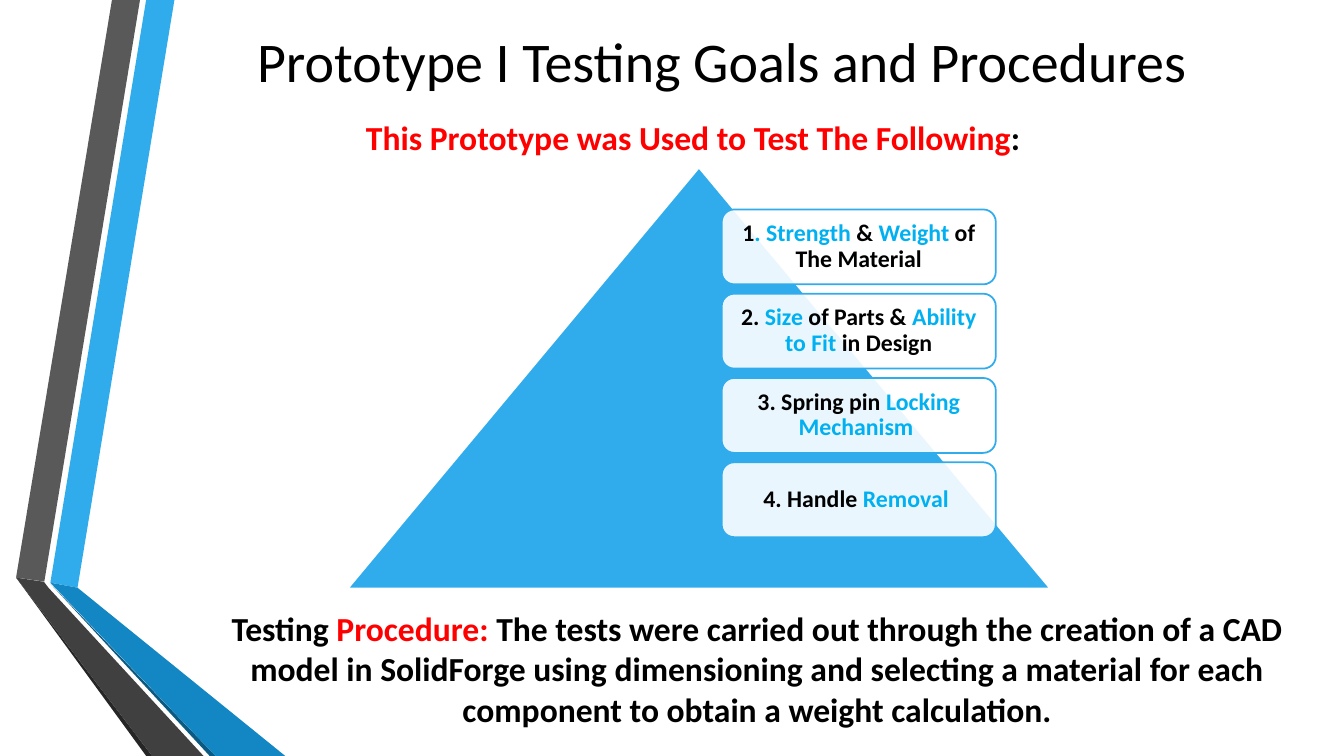
from dataclasses import dataclass

from lxml import etree
from pptx import Presentation
from pptx.dml.color import RGBColor
from pptx.enum import shapes, text
from pptx.oxml import ns
from pptx.util import Pt

COLOURS = {
    "black": "000000",
    "red": "FF0000",
    "white": "FFFFFF",
    "sky": "30ACEC",
    "accent": "00B0F0",
    "ocean": "1287C3",
    "navy": "0C5A82",
    "grey": "595959",
    "charcoal": "404040",
    "soot": "262626",
}
FONT = "Calibri"


@dataclass
class Span:
    words: str
    colour: str = "black"


@dataclass
class Ribbon:
    colour: str
    points: list[tuple[float, float]]


@dataclass
class Area:
    left: float
    top: float
    width: float
    height: float


RIBBONS = [
    Ribbon("sky", [(36, 416.2), (55.4, 419.8), (124.6, 0), (104.4, 0)]),
    Ribbon("grey", [(100, 0), (80, 0), (11.5, 412.6), (31.7, 415.4)]),
    Ribbon("soot", [(11.5, 412.6), (104.4, 540), (108.7, 540)]),
    Ribbon("navy", [(36, 416.9), (149.8, 540), (154, 540)]),
    Ribbon("ocean", [(36, 416.2), (154, 540), (203.8, 540), (55.4, 419.8)]),
    Ribbon("charcoal", [(145.4, 540), (34.6, 419.8), (31.4, 415.6), (11.5, 412.6), (108.7, 540)]),
]

GOALS = [
    [Span("1"), Span(". Strength ", "accent"), Span("& "), Span("Weight", "accent"),
     Span(" of The Material")],
    [Span("2. "), Span("Size", "accent"), Span(" of Parts & "),
     Span("Ability to Fit ", "accent"), Span("in Design")],
    [Span("3. Spring pin "), Span("Locking Mechanism ", "accent")],
    [Span("4. Handle "), Span("Removal ", "accent")],
]

TITLE = [Span("Prototype I Testing Goals and Procedures")]
SUBTITLE = [Span("This Prototype was Used to Test The Following", "red"), Span(":")]
PROCEDURE = [
    Span("Testing "),
    Span("Procedure: ", "red"),
    Span("The tests were carried out through the creation of a CAD model in SolidForge "
         "using dimensioning and selecting a material for each component to obtain "
         "a weight calculation."),
]

TITLE_AREA = Area(121, -26, 789, 138)
SUBTITLE_AREA = Area(207.4, 28.8, 575.3, 138)
PROCEDURE_AREA = Area(157, 427.7, 767.5, 99.4)
TRIANGLE_AREA = Area(248.4, 119.7, 501.8, 300.7)
FIRST_CARD = Area(515.5, 149.6, 195.8, 53.5)
CARD_STEP = 60.2


def rgb(colour: str) -> RGBColor:
    return RGBColor.from_string(COLOURS[colour])


def lengths(area: Area) -> tuple:
    return Pt(area.left), Pt(area.top), Pt(area.width), Pt(area.height)


def place(box, area: Area) -> None:
    box.left, box.top, box.width, box.height = lengths(area)


def paint(shape, fill: str, line: str | None = None) -> None:
    shape.shadow.inherit = False
    shape.fill.solid()
    shape.fill.fore_color.rgb = rgb(fill)
    if line is None:
        shape.line.fill.background()
    else:
        shape.line.color.rgb = rgb(line)
        shape.line.width = Pt(1.25)


def write(box, spans: list[Span], size: float, bold: bool = True):
    frame = box.text_frame
    frame.word_wrap = True
    frame.auto_size = text.MSO_AUTO_SIZE.NONE
    frame.vertical_anchor = text.MSO_ANCHOR.MIDDLE
    frame.text = spans[0].words
    para = frame.paragraphs[0]
    para.alignment = text.PP_ALIGN.CENTER
    for span in spans[1:]:
        para.add_run().text = span.words
    for run, span in zip(para.runs, spans):
        run.font.name = FONT
        run.font.size = Pt(size)
        run.font.bold = bold
        run.font.color.rgb = rgb(span.colour)
    return para


def space_body(para) -> None:
    para.space_before = Pt(4.8)
    para.space_after = Pt(6)


def remove_bullet(para) -> None:
    properties = para._p.get_or_add_pPr()
    properties.set("marL", "0")
    properties.set("indent", "0")
    etree.SubElement(properties, ns.qn("a:buNone"))


def draw_ribbon(page, ribbon: Ribbon) -> None:
    corners = [(Pt(x), Pt(y)) for x, y in ribbon.points]
    builder = page.shapes.build_freeform(*corners[0])
    builder.add_line_segments(corners[1:], close=True)
    paint(builder.convert_to_shape(), ribbon.colour)


def draw_card(page, area: Area, spans: list[Span]) -> None:
    card = page.shapes.add_shape(shapes.MSO_SHAPE.ROUNDED_RECTANGLE, *lengths(area))
    paint(card, "white", "sky")
    fill_colour = card._element.spPr.find(ns.qn("a:solidFill"))[0]
    etree.SubElement(fill_colour, ns.qn("a:alpha"), val="90000")
    frame = card.text_frame
    frame.margin_left = frame.margin_right = Pt(5)
    frame.margin_top = frame.margin_bottom = Pt(5)
    para = write(card, spans, 17)
    para.line_spacing = 0.9
    para.space_after = Pt(6)


def main() -> None:
    deck = Presentation()
    deck.slide_width, deck.slide_height = Pt(960), Pt(540)
    page = deck.slides.add_slide(deck.slide_layouts[1])

    for ribbon in RIBBONS:
        draw_ribbon(page, ribbon)

    title = page.shapes.title
    place(title, TITLE_AREA)
    write(title, TITLE, 40, bold=False)

    subtitle = page.placeholders[1]
    place(subtitle, SUBTITLE_AREA)
    para = write(subtitle, SUBTITLE, 24)
    space_body(para)
    remove_bullet(para)

    triangle = page.shapes.add_shape(
        shapes.MSO_SHAPE.ISOSCELES_TRIANGLE, *lengths(TRIANGLE_AREA))
    paint(triangle, "sky", "white")

    for row, goal in enumerate(GOALS):
        top = FIRST_CARD.top + row * CARD_STEP
        draw_card(page, Area(FIRST_CARD.left, top, FIRST_CARD.width, FIRST_CARD.height), goal)

    procedure = page.shapes.add_textbox(*lengths(PROCEDURE_AREA))
    space_body(write(procedure, PROCEDURE, 24))

    deck.save("out.pptx")


if __name__ == "__main__":
    main()
